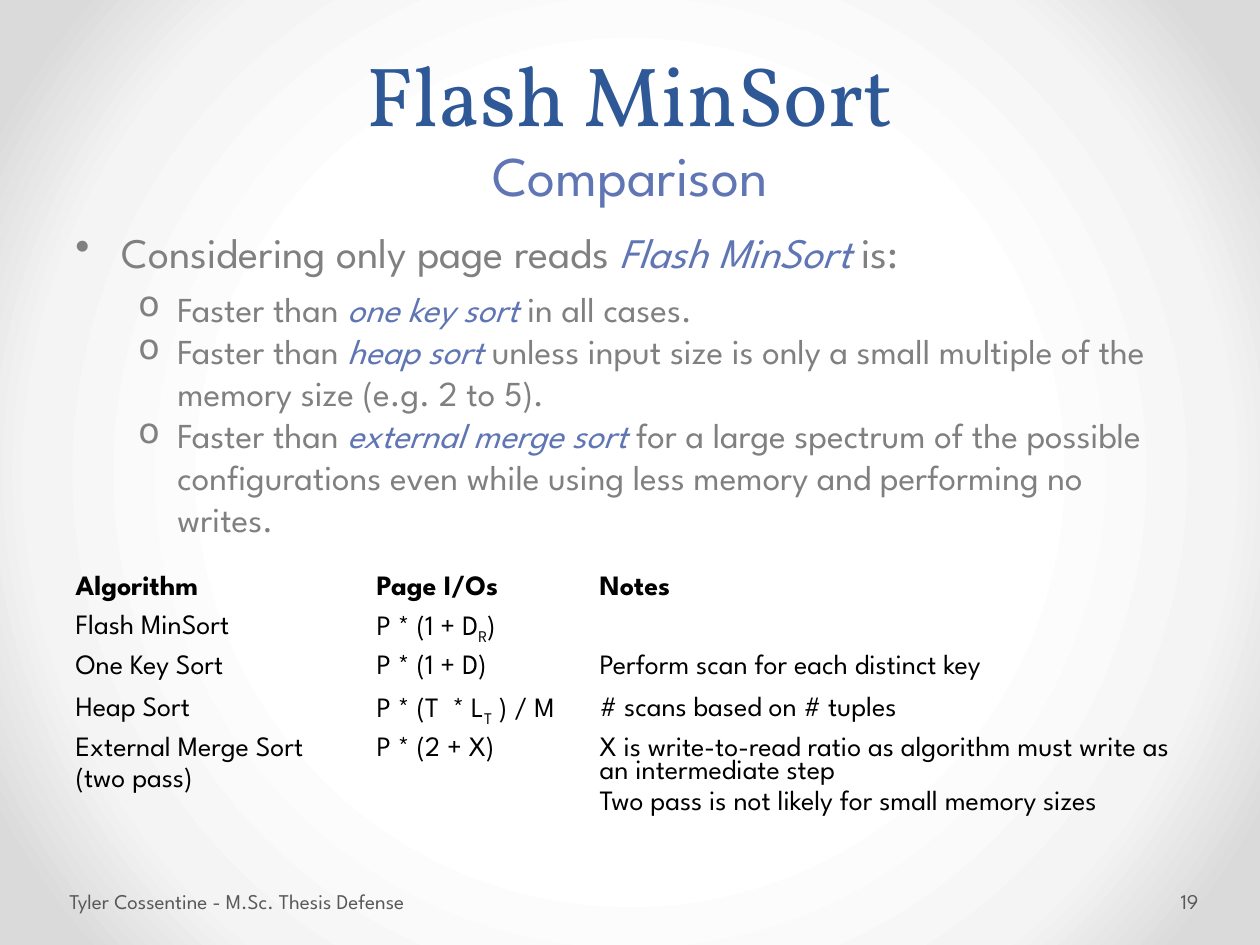
import lxml.etree
import pptx
import pptx.dml.color
import pptx.enum.text
import pptx.oxml
import pptx.oxml.ns
import pptx.util

Inches, Pt = pptx.util.Inches, pptx.util.Pt
Align, Anchor = pptx.enum.text.PP_ALIGN, pptx.enum.text.MSO_ANCHOR
qn = pptx.oxml.ns.qn

COLORS = {"title": "2F5897", "accent": "6076B4", "body": "808080",
          "footer": "595959", "table": "000000"}
BACKDROP = [(50, "FFFFFF"), (76, "F4F4F4"), (92, "DADADA")]
HEADING_FONT, BODY_FONT = "Vollkorn", "League Spartan"
NO_STYLE_NO_GRID = "{2D5ABB26-0587-4C30-8999-92F81FD0307C}"

CLAIM = "Considering only page reads |Flash MinSort |is:"
FINDINGS = [
    "Faster than |one key sort |in all cases.",
    "Faster than |heap sort |unless input size is only a small multiple of the "
    "memory size (e.g. 2 to 5).",
    "Faster than |external merge sort |for a large spectrum of the possible "
    "configurations even while using less memory and performing no writes.",
]
COSTS = [
    ("Algorithm", "Page I/Os", "Notes"),
    ("Flash MinSort", "P * (1 + D|R|)", ""),
    ("One Key Sort", "P * (1 + D)", "Perform scan for each distinct key"),
    ("Heap Sort", "P * (T  * L|T| ) / M", "# scans based on # tuples"),
    ("External Merge Sort\n(two pass)", "P * (2 + X)",
     "X is write-to-read ratio as algorithm must write as an intermediate step\n"
     "Two pass is not likely for small memory sizes"),
]
COLUMN_WIDTHS = [2.39, 1.77, 4.84]
ROW_HEIGHTS = [0.31, 0.31, 0.33, 0.31, 0.94]


def rgb(name):
    """Return the named colour."""
    return pptx.dml.color.RGBColor.from_string(COLORS[name])


def emphasize(run):
    """Set a run in accented italics."""
    run.font.italic = True
    run.font.color.rgb = rgb("accent")


def subscript(run):
    """Lower a run below the baseline."""
    run.font._element.set("baseline", "-25000")


def write(paragraph, text, size, color, font=BODY_FONT, mark=emphasize):
    """Fill a paragraph, marking every second part between bars."""
    paragraph.font.size = Pt(size)
    paragraph.font.name = font
    paragraph.font.color.rgb = rgb(color)
    for index, part in enumerate(text.split("|")):
        if part:
            run = paragraph.add_run()
            run.text = part
            if index % 2:
                mark(run)


def space(paragraph, before=0, after=0, line=None):
    """Set the spacing of a paragraph in points and lines."""
    paragraph.space_before, paragraph.space_after = Pt(before), Pt(after)
    paragraph.line_spacing = line


def add_bullet(paragraph, symbol, left, hanging):
    """Give a paragraph a hanging bullet."""
    properties = paragraph._p.get_or_add_pPr()
    properties.set("marL", str(Inches(left)))
    properties.set("indent", str(-Inches(hanging)))
    bullet = lxml.etree.Element(qn("a:buChar"), char=symbol)
    properties.find(qn("a:defRPr")).addprevious(bullet)


def add_text_frame(slide, left, top, width, height, anchor, margins=(0.1, 0.05, 0.1, 0.05)):
    """Add a wrapping text box and return its frame."""
    frame = slide.shapes.add_textbox(*map(Inches, (left, top, width, height))).text_frame
    frame.word_wrap = True
    frame.vertical_anchor = anchor
    (frame.margin_left, frame.margin_top,
     frame.margin_right, frame.margin_bottom) = map(Inches, margins)
    return frame


def paint_background(slide):
    """Fill the background with a radial gradient."""
    fill = slide.background.fill
    fill.gradient()
    gradient = slide.background._cSld.find(".//" + qn("a:gradFill"))
    for child in list(gradient):
        gradient.remove(child)
    stops = lxml.etree.SubElement(gradient, qn("a:gsLst"))
    for position, color in BACKDROP:
        stop = lxml.etree.SubElement(stops, qn("a:gs"), pos=str(position * 1000))
        lxml.etree.SubElement(stop, qn("a:srgbClr"), val=color)
    radial = lxml.etree.SubElement(gradient, qn("a:path"))
    radial.set("path", "circle")
    lxml.etree.SubElement(radial, qn("a:fillToRect"),
                          {side: "50000" for side in "ltrb"})


def add_heading(slide):
    """Fill the title and add the subtitle."""
    title = slide.shapes.title
    title.left, title.top, title.width, title.height = map(Inches, (0.5, 0, 9, 1.19))
    title.text_frame.vertical_anchor = Anchor.BOTTOM
    heading = title.text_frame.paragraphs[0]
    write(heading, "Flash MinSort", 48, "title", HEADING_FONT)
    heading.alignment = Align.CENTER
    heading.line_spacing = Pt(58)
    subtitle = add_text_frame(slide, 0.5, 1.14, 9, 0.56, Anchor.BOTTOM).paragraphs[0]
    write(subtitle, "Comparison", 32, "accent")
    subtitle.alignment = Align.CENTER
    space(subtitle, 6.4, 6)


def add_findings(slide):
    """Add the claim and its bulleted findings."""
    frame = add_text_frame(slide, 0.5, 1.75, 9, 2.62, Anchor.TOP)
    claim = frame.paragraphs[0]
    write(claim, CLAIM, 24, "body")
    space(claim, 4.8, 6)
    add_bullet(claim, "•", 0.37, 0.37)
    for text in FINDINGS:
        finding = frame.add_paragraph()
        finding.level = 1
        write(finding, text, 20, "body")
        space(finding)
        add_bullet(finding, "o", 0.81, 0.31)


def fill_cell(cell, text, bold):
    """Write the lines of one table cell."""
    cell.fill.background()
    cell.margin_bottom = 0
    for index, line in enumerate(text.split("\n")):
        frame = cell.text_frame
        paragraph = frame.add_paragraph() if index else frame.paragraphs[0]
        write(paragraph, line, 16, "table", mark=subscript)
        paragraph.font.bold = bold
        space(paragraph, before=4.8 if line else 0, line=0.89)
        if not line:
            ending = paragraph._p.get_or_add_endParaRPr()
            ending.set("sz", "1600")
            lxml.etree.SubElement(ending, qn("a:latin"), typeface=BODY_FONT)


def add_cost_table(slide):
    """Add the table of page costs per algorithm."""
    frame = slide.shapes.add_table(len(COSTS), len(COLUMN_WIDTHS), Inches(0.5),
                                   Inches(4.53), Inches(9), Inches(sum(ROW_HEIGHTS)))
    costs = frame.table
    costs.first_row = costs.horz_banding = False
    costs._tbl.find(".//" + qn("a:tableStyleId")).text = NO_STYLE_NO_GRID
    for column, width in zip(costs.columns, COLUMN_WIDTHS):
        column.width = Inches(width)
    for row_index, (row, height, texts) in enumerate(zip(costs.rows, ROW_HEIGHTS, COSTS)):
        row.height = Inches(height)
        for cell, text in zip(row.cells, texts):
            fill_cell(cell, text, row_index == 0)


def add_footer(slide, text, left, width, margins):
    """Add one footer text."""
    frame = add_text_frame(slide, left, 6.95, width, 0.4, Anchor.MIDDLE, margins)
    write(frame.paragraphs[0], text, 12, "footer")


def main():
    """Build and save the slide."""
    deck = pptx.Presentation()
    deck.slide_width, deck.slide_height = Inches(10), Inches(7.5)
    slide = deck.slides.add_slide(deck.slide_layouts[5])
    paint_background(slide)
    add_heading(slide)
    add_findings(slide)
    add_cost_table(slide)
    add_footer(slide, "Tyler Cossentine - M.Sc. Thesis Defense", 0.5, 3.43,
               (0.05, 0.05, 0.1, 0.05))
    add_footer(slide, "19", 9.34, 0.61, (0.03, 0.05, 0.05, 0.05))
    deck.save("out.pptx")


if __name__ == "__main__":
    main()
